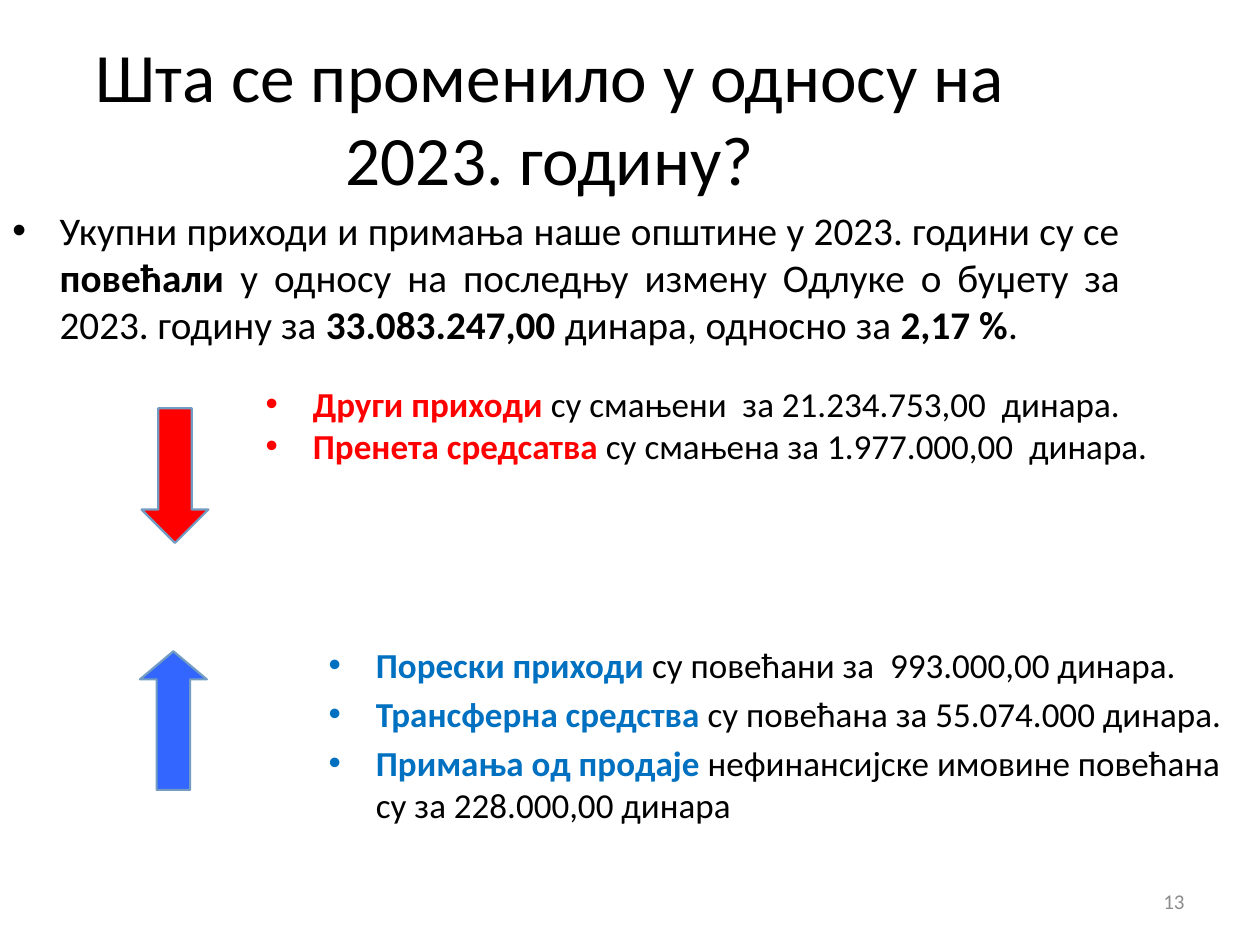
from lxml import etree
from pptx import Presentation
from pptx.dml.color import RGBColor
from pptx.enum import shapes, text
from pptx.oxml.ns import qn
from pptx.util import Pt

BLACK = RGBColor(0x00, 0x00, 0x00)
GREY = RGBColor(0x8C, 0x8C, 0x8C)
RED = RGBColor(0xFF, 0x00, 0x00)
BLUE = RGBColor(0x00, 0x70, 0xC0)
ARROW_BLUE = RGBColor(0x33, 0x66, 0xFF)
ARROW_EDGE = RGBColor(0x73, 0x9C, 0xC3)

FONT = "Calibri"
INDENT = Pt(27)
LEFT, JUSTIFY = text.PP_ALIGN.LEFT, text.PP_ALIGN.JUSTIFY

SUMMARY = [
    ("Укупни приходи и примања наше општине у 2023. години су се ", False),
    ("повећали ", True),
    ("у односу на последњу измену Одлуке о буџету за 2023. годину за ", False),
    ("33.083.247,00 ", True),
    ("динара, односно за ", False),
    ("2,17 %", True),
    (".", False),
]
DECREASES = [
    ("Други приходи ", "су смањени  за 21.234.753,00  динара.", LEFT),
    ("Пренета средсатва ", "су смањена за 1.977.000,00  динара.", JUSTIFY),
]
INCREASES = [
    ("Порески приходи ", "су повећани за  993.000,00 динара.", LEFT),
    ("Трансферна средства ", "су повећана за 55.074.000 динара.", LEFT),
    ("Примања од продаје ",
     "нефинансијске имовине повећана су за 228.000,00 динара", LEFT),
]


def add_frame(slide, box, anchor=text.MSO_ANCHOR.TOP):
    frame = slide.shapes.add_textbox(*map(Pt, box)).text_frame
    frame.word_wrap = True
    frame.vertical_anchor = anchor
    return frame


def set_font(paragraph, size, color=None):
    paragraph.font.name = FONT
    paragraph.font.size = Pt(size)
    if color is not None:
        paragraph.font.color.rgb = color


def add_line(slide, box, words, size, color, align):
    """Place one vertically centred paragraph in the box."""
    line = add_frame(slide, box, text.MSO_ANCHOR.MIDDLE).paragraphs[0]
    line.text = words
    line.alignment = align
    set_font(line, size, color)


def add_bullet(paragraph):
    """Give the paragraph a hanging round bullet."""
    props = paragraph._p.get_or_add_pPr()
    props.set("marL", str(INDENT))
    props.set("indent", str(-INDENT))
    bullet_font = etree.Element(qn("a:buFont"), typeface="Arial")
    bullet = etree.Element(qn("a:buChar"), char="•")
    defaults = props.find(qn("a:defRPr"))
    defaults.addprevious(bullet_font)
    defaults.addprevious(bullet)


def add_run(paragraph, words, bold, color):
    run = paragraph.add_run()
    run.text = words
    run.font.bold = bold
    run.font.color.rgb = color


def add_summary(slide, box):
    summary = add_frame(slide, box).paragraphs[0]
    summary.alignment = JUSTIFY
    set_font(summary, 22.4)
    add_bullet(summary)
    for words, bold in SUMMARY:
        add_run(summary, words, bold, BLACK)


def add_changes(slide, box, changes, color, gap):
    """List changes, each opening with its coloured bold source of income."""
    frame = add_frame(slide, box)
    for index, (source, change, align) in enumerate(changes):
        item = frame.add_paragraph() if index else frame.paragraphs[0]
        item.alignment = align
        item.space_before = Pt(gap if index else 0)
        set_font(item, 20)
        add_bullet(item)
        add_run(item, source, True, color)
        add_run(item, change, False, BLACK)


def add_arrow(slide, box, direction, head, color):
    arrow = slide.shapes.add_shape(direction, *map(Pt, box))
    arrow.adjustments[0] = 0.5
    arrow.adjustments[1] = head
    arrow.shadow.inherit = False
    arrow.fill.solid()
    arrow.fill.fore_color.rgb = color
    arrow.line.color.rgb = ARROW_EDGE
    arrow.line.width = Pt(1.25)


def main():
    deck = Presentation()
    deck.slide_width, deck.slide_height = Pt(720), Pt(540)
    slide = deck.slides.add_slide(deck.slide_layouts[6])

    add_line(slide, (516, 500.5, 168, 28.75), "13", 12, GREY, text.PP_ALIGN.RIGHT)
    add_line(slide, (0, 21.6, 628.5, 90),
             "Шта се променило у односу на 2023. годину?",
             39.6, BLACK, text.PP_ALIGN.CENTER)
    add_summary(slide, (0, 114.5, 648, 89.3))
    add_changes(slide, (180.7, 364.3, 539.3, 110), INCREASES, BLUE, gap=4)
    add_changes(slide, (144.7, 215.3, 539.3, 100), DECREASES, RED, gap=0)
    add_arrow(slide, (80.9, 233.3, 38.2, 77), shapes.MSO_SHAPE.DOWN_ARROW, 0.5, RED)
    add_arrow(slide, (80, 372.2, 38.2, 79.2), shapes.MSO_SHAPE.UP_ARROW, 0.42, ARROW_BLUE)

    deck.save("out.pptx")


if __name__ == "__main__":
    main()
